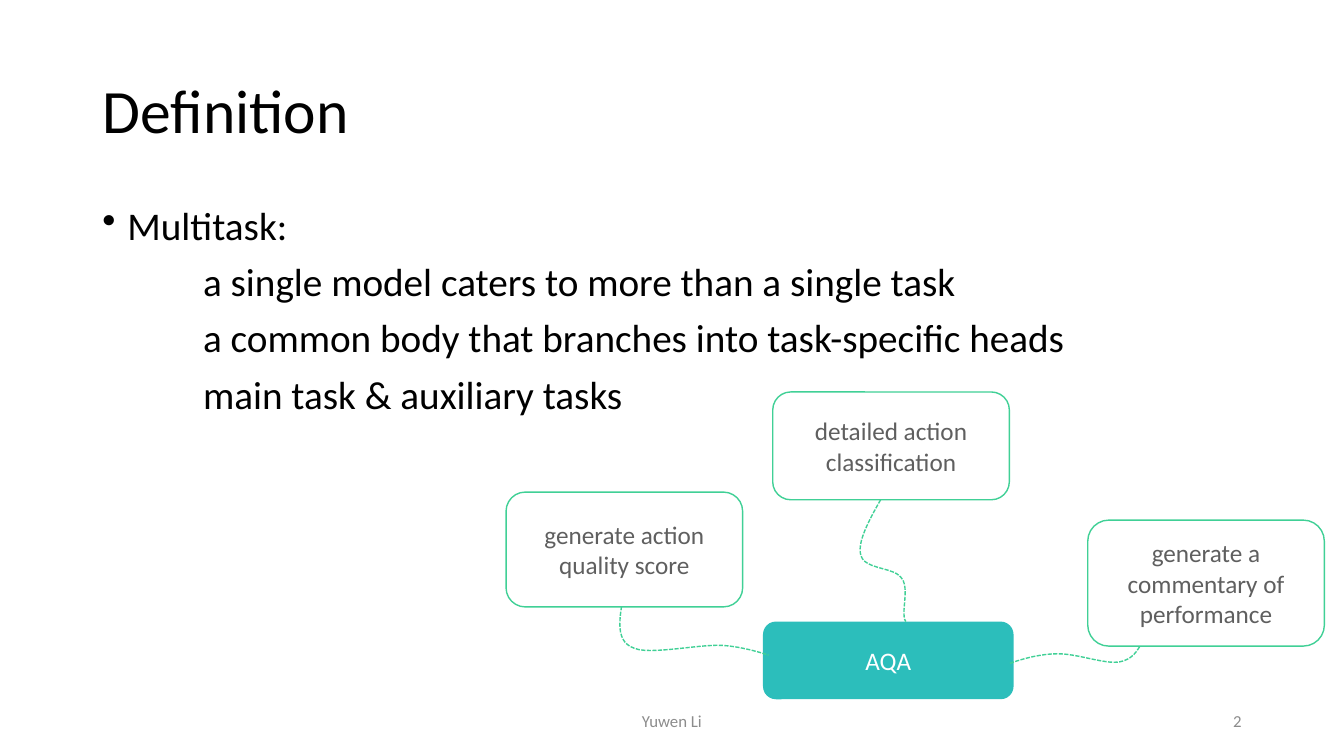
from pptx import Presentation
from pptx import util as u
from pptx.dml.color import RGBColor
from pptx.enum import dml, shapes, text
from pptx.oxml.ns import qn
from lxml import etree

GREEN, TEAL, GREY = "40D096", "2CBEBB", "5F5F5F"
MIDDLE = text.MSO_ANCHOR.MIDDLE
LEFT, CENTER, RIGHT = text.PP_ALIGN.LEFT, text.PP_ALIGN.CENTER, text.PP_ALIGN.RIGHT


def rgb(color):
    return RGBColor.from_string(color)


def write(sp, lines, size, color, align=LEFT, anchor=MIDDLE):
    """Fill a shape with one paragraph per line, all in the same style."""
    tf = sp.text_frame
    tf.word_wrap = True
    tf.vertical_anchor = anchor
    tf.text = "\n".join(lines)
    for p in tf.paragraphs:
        p.alignment = align
        p.font.name = "Calibri"
        p.font.size = u.Pt(size)
        p.font.color.rgb = rgb(color)
    return tf.paragraphs


prs = Presentation()
prs.slide_width, prs.slide_height = u.Pt(960), u.Pt(540)
s = prs.slides.add_slide(prs.slide_layouts[5])

# Title
title = s.shapes.title
title.left, title.top, title.width, title.height = map(u.Pt, (66, 28.75, 828, 104.4))
write(title, ["Definition"], 44, "000000")[0].line_spacing = 0.9

# Body: one bullet with indented lines below it
body = s.shapes.add_textbox(*map(u.Pt, (66, 143.75, 828, 342.6)))
lines = [
    "Multitask:",
    "a single model caters to more than a single task",
    "a common body that branches into task-specific heads",
    "main task & auxiliary tasks",
]
paragraphs = write(body, lines, 28, "000000", anchor=text.MSO_ANCHOR.TOP)
for i, p in enumerate(paragraphs):
    p.line_spacing = 0.9
    p.space_before = u.Pt(10)
    pPr = p._p.get_or_add_pPr()
    pPr.set("marL", str(u.Pt(72 if i else 18)))
    pPr.set("indent", str(u.Pt(0 if i else -18)))
    if i == 0:
        bullet = etree.Element(qn("a:buChar"), char="•")
        pPr.find(qn("a:spcBef")).addnext(bullet)

# Footer and slide number
for label, left, width, align in [("Yuwen Li", 318, 324, CENTER), ("2", 678, 216, RIGHT)]:
    sp = s.shapes.add_textbox(*map(u.Pt, (left, 500.5, width, 28.75)))
    write(sp, [label], 12, "8C8C8C", align)

# Shared body and its task heads
boxes = [
    ("AQA", 545, 444, 179, 55.5),
    ("generate action quality score", 361.5, 351.5, 169, 82),
    ("detailed action classification", 552, 280, 169, 77),
    ("generate a commentary of performance", 777, 371.5, 169, 90),
]
for label, *place in boxes:
    sp = s.shapes.add_shape(shapes.MSO_SHAPE.ROUNDED_RECTANGLE, *map(u.Pt, place))
    sp.shadow.inherit = False
    if label == "AQA":
        sp.fill.solid()
        sp.fill.fore_color.rgb = rgb(TEAL)
        sp.line.fill.background()
    else:
        sp.fill.background()
        sp.line.color.rgb = rgb(GREEN)
        sp.line.width = u.Pt(1)
    write(sp, [label], 18, "FFFFFF" if label == "AQA" else GREY, CENTER)

# Dashed branches: Bezier control points, three more per segment
branches = [
    [(444, 433), (442, 446), (441, 459), (453, 463), (464, 468),
     (500, 460), (516, 461), (532, 462), (549, 468), (549, 468)],
    [(629, 357), (620, 373), (612, 388), (615, 397), (618, 407),
     (639, 405), (644, 413), (650, 420), (643, 439), (647, 444)],
    [(814, 462), (811, 467), (807, 472), (798, 473), (788, 474),
     (769, 467), (756, 467), (744, 467), (732, 470), (721, 474)],
]
STEPS, UNITS = 12, 100  # samples per segment, drawing units per point
for controls in branches:
    points = [controls[0]]
    for k in range(0, len(controls) - 1, 3):
        for step in range(1, STEPS + 1):
            t = step / STEPS
            weights = ((1 - t) ** 3, 3 * t * (1 - t) ** 2, 3 * t * t * (1 - t), t ** 3)
            points.append([sum(w * c[axis] for w, c in zip(weights, controls[k:k + 4]))
                           for axis in (0, 1)])
    points = [(round(x * UNITS), round(y * UNITS)) for x, y in points]
    builder = s.shapes.build_freeform(*points[0], scale=u.Pt(1) / UNITS)
    builder.add_line_segments(points[1:], close=False)
    sp = builder.convert_to_shape()
    sp.shadow.inherit = False
    sp.fill.background()
    sp.line.color.rgb = rgb(GREEN)
    sp.line.width = u.Pt(1)
    sp.line.dash_style = dml.MSO_LINE.SQUARE_DOT

prs.save("out.pptx")
